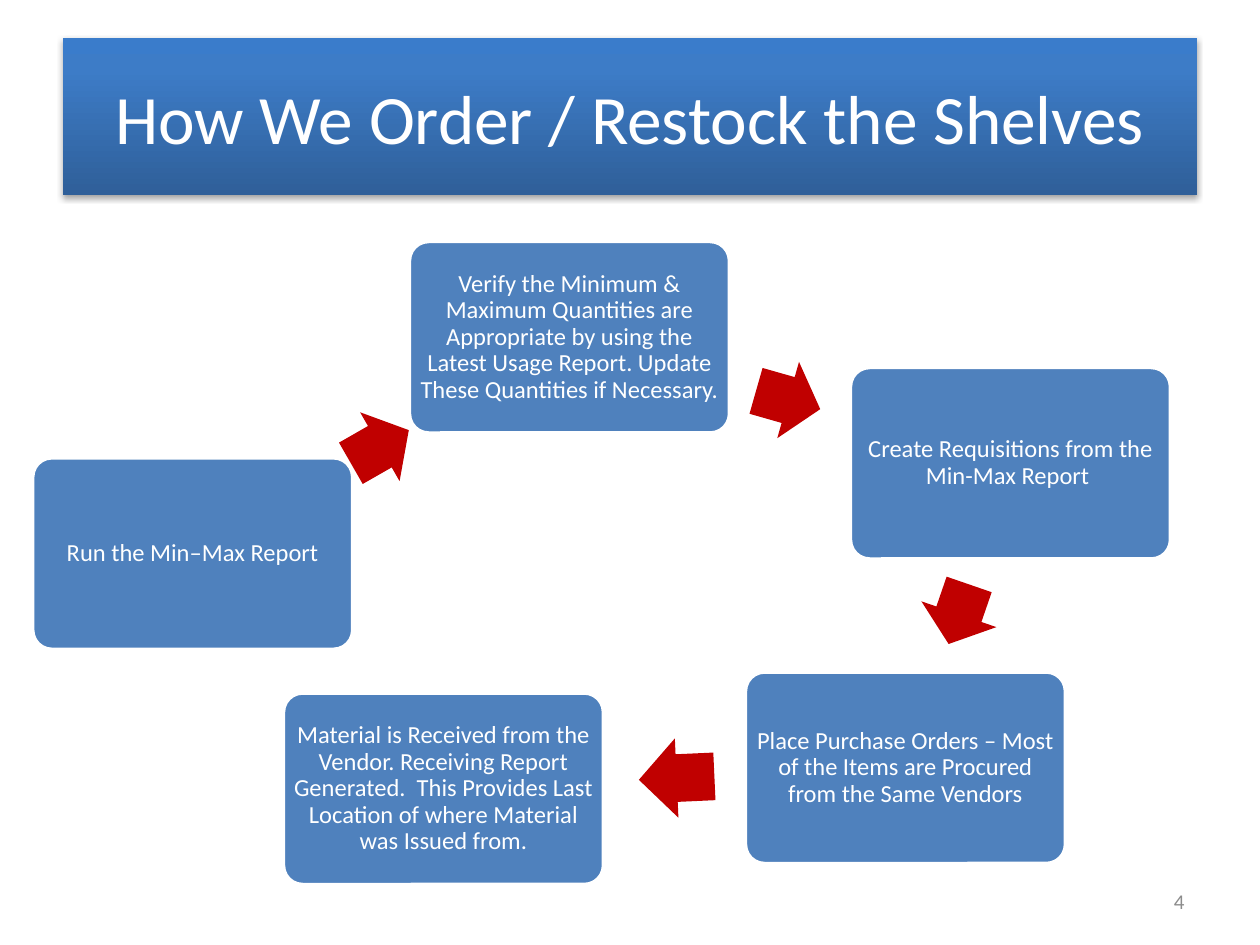
from lxml import etree
from pptx import Presentation
from pptx.dml.color import RGBColor
from pptx.enum.shapes import MSO_SHAPE
from pptx.enum.text import MSO_ANCHOR, MSO_AUTO_SIZE, PP_ALIGN
from pptx.util import Pt

ROUNDED = MSO_SHAPE.ROUNDED_RECTANGLE
ARROW = MSO_SHAPE.RIGHT_ARROW
MIDDLE = MSO_ANCHOR.MIDDLE
NO_FIT = MSO_AUTO_SIZE.NONE
CENTER, RIGHT = PP_ALIGN.CENTER, PP_ALIGN.RIGHT

COLORS = {"white": "FFFFFF", "step": "4F81BD", "arrow": "C00000", "number": "8C8C8C",
          "shadow": "000000"}
TITLE = "How We Order / Restock the Shelves"
TITLE_STOPS = [(0, "2F5F99"), (80, "3D7CC7"), (100, "3A7CCB")]
PAGE_NUMBER = "4"
STEPS = [
    ("Run the Min–Max Report", 18.72, 261.6),
    ("Verify the Minimum & Maximum Quantities are Appropriate by using the "
     "Latest Usage Report. Update These Quantities if Necessary.", 234, 138),
    ("Create Requisitions from the Min-Max Report ", 486, 210),
    ("Place Purchase Orders – Most of the Items are Procured from the Same Vendors",
     426, 384),
    ("Material is Received from the Vendor. Receiving Report Generated.  This "
     "Provides Last Location of where Material was Issued from.", 162, 396),
]
ARROWS = [(198, 232.56, 38.16, 330.2), (431.28, 205.92, 38.16, 15.9),
          (529.92, 328.32, 36, 109), (365.04, 421.92, 43.2, 177.4)]
STEP_WIDTH, STEP_HEIGHT, ARROW_HEIGHT = 182.88, 109.44, 45.36
DRAWING = "http://schemas.openxmlformats.org/drawingml/2006/main"


def write(shape, text, size, color, align=CENTER, spacing=1.0, inset=None):
    frame = shape.text_frame
    frame.word_wrap = True
    frame.auto_size = NO_FIT
    frame.vertical_anchor = MIDDLE
    if inset is not None:
        frame.margin_left = frame.margin_right = Pt(inset)
        frame.margin_top = frame.margin_bottom = Pt(inset)
    para = frame.paragraphs[0]
    para.alignment = align
    para.line_spacing = spacing
    span = para.add_run()
    span.text = text
    span.font.name = "Calibri"
    span.font.size = Pt(size)
    span.font.color.rgb = RGBColor.from_string(COLORS[color])


def add_shape(page, kind, left, top, width, height, color, adjustments):
    shape = page.shapes.add_shape(kind, Pt(left), Pt(top), Pt(width), Pt(height))
    shape.shadow.inherit = False
    shape.fill.solid()
    shape.fill.fore_color.rgb = RGBColor.from_string(COLORS[color])
    for index, value in enumerate(adjustments):
        shape.adjustments[index] = value
    return shape


def style_title(title):
    stops = "".join(f'<a:gs pos="{position * 1000}"><a:srgbClr val="{color}"/></a:gs>'
                    for position, color in TITLE_STOPS)
    parts = etree.fromstring(
        f'<a:parts xmlns:a="{DRAWING}">'
        '<a:prstGeom prst="rect"><a:avLst/></a:prstGeom>'
        f'<a:gradFill rotWithShape="1"><a:gsLst>{stops}</a:gsLst>'
        '<a:lin ang="16200000" scaled="0"/></a:gradFill>'
        f'<a:effectLst><a:outerShdw blurRad="{Pt(3.1)}" dist="{Pt(1.8)}" dir="5400000" '
        f'rotWithShape="0"><a:srgbClr val="{COLORS["shadow"]}"><a:alpha val="35000"/>'
        '</a:srgbClr></a:outerShdw></a:effectLst></a:parts>')
    for part in list(parts):
        title._element.spPr.append(part)


def add_step(page, text, left, top):
    box = add_shape(page, ROUNDED, left, top, STEP_WIDTH, STEP_HEIGHT, "step", [0.1])
    box.line.color.rgb = RGBColor.from_string(COLORS["white"])
    box.line.width = Pt(2)
    write(box, text, 14, "white", spacing=0.9, inset=1)


def add_arrow(page, left, top, width, angle):
    arrow = add_shape(page, ARROW, left, top, width, ARROW_HEIGHT, "arrow", [0.6, 0.5])
    arrow.line.fill.background()
    arrow.rotation = angle


def main():
    deck = Presentation()
    deck.slide_width, deck.slide_height = Pt(720), Pt(540)
    page = deck.slides.add_slide(deck.slide_layouts[5])

    title = page.shapes.title
    title.left, title.top, title.width, title.height = Pt(36), Pt(21.6), Pt(648), Pt(90)
    style_title(title)
    write(title, TITLE, 39.6, "white")

    for index, step in enumerate(STEPS):
        add_step(page, *step)
        if index < len(ARROWS):
            add_arrow(page, *ARROWS[index])

    number = page.shapes.add_textbox(Pt(516), Pt(500.5), Pt(168), Pt(28.75))
    write(number, PAGE_NUMBER, 12, "number", align=RIGHT)
    deck.save("out.pptx")


if __name__ == "__main__":
    main()
